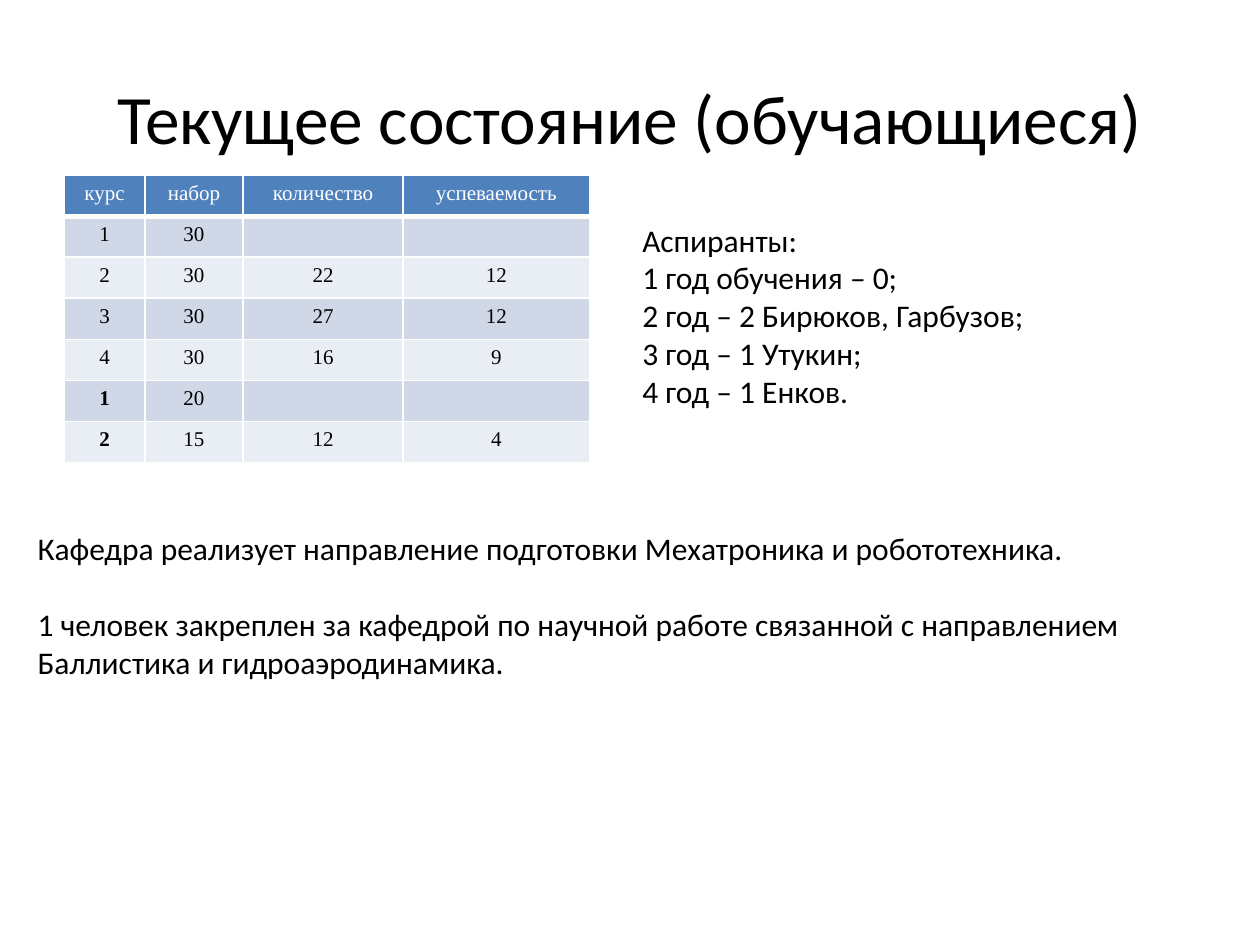
from dataclasses import dataclass

from lxml import etree
from pptx import Presentation
from pptx.dml.color import RGBColor
from pptx.enum.text import MSO_ANCHOR, PP_ALIGN
from pptx.oxml.ns import qn
from pptx.util import Emu, Inches, Pt

LEFT, MID = PP_ALIGN.LEFT, PP_ALIGN.CENTER
TOP, CORE = MSO_ANCHOR.TOP, MSO_ANCHOR.MIDDLE
SANS, SERIF = "Calibri", "Times New Roman"
BLACK, WHITE = "000000", "FFFFFF"
HEAD, BANDS = "4F81BD", ("D0D8E8", "E9EDF4")
WIDE, HIGH = Inches(10), Inches(7.5)
COLS, ROW = (0.64, 0.78, 1.27, 1.48), 2.28 / 7
SIDES = ("a:lnL", "a:lnR", "a:lnT", "a:lnB")
CELL_SIZE = 12

GRID = (
    ("курс", "набор", "количество", "успеваемость"),
    ("1", "30", "", ""),
    ("2", "30", "22", "12"),
    ("3", "30", "27", "12"),
    ("4", "30", "16", "9"),
    ("1", "20", "", ""),
    ("2", "15", "12", "4"),
)
BOLD_FROM = 5


@dataclass(frozen=True)
class Block:
    x: float
    y: float
    w: float
    h: float
    lines: tuple[str, ...]
    size: float = 18
    align: PP_ALIGN = LEFT
    anchor: MSO_ANCHOR = TOP
    wrap: bool = True
    gap: float = 0


BLOCKS = (
    Block(0.05, 0.04, 0.9, 0.167, ("Текущее состояние (обучающиеся)",),
          39.6, MID, CORE),
    Block(0.5, 0.227, 0.326, 0.216, (
        "Аспиранты:",
        "1 год обучения – 0;",
        "2 год – 2 Бирюков, Гарбузов;",
        "3 год – 1 Утукин;",
        "4 год – 1 Енков.",
    ), wrap=False),
    Block(0.02, 0.553, 0.96, 0.256, (
        "Кафедра реализует направление подготовки Мехатроника и робототехника.",
        "1 человек закреплен за кафедрой по научной работе связанной "
        "с направлением Баллистика и гидроаэродинамика.",
    ), gap=22),
)


def tint(code: str) -> RGBColor:
    return RGBColor.from_string(code)


def write(para, text: str, face: str, size: float, color: str,
          bold: bool = False) -> None:
    run = para.add_run()
    run.text = text
    font = run.font
    font.name, font.size, font.bold = face, Pt(size), bold
    font.color.rgb = tint(color)


def draw_block(slide, block: Block) -> None:
    box = slide.shapes.add_textbox(
        Emu(int(block.x * WIDE)), Emu(int(block.y * HIGH)),
        Emu(int(block.w * WIDE)), Emu(int(block.h * HIGH)))
    frame = box.text_frame
    frame.word_wrap = block.wrap
    frame.vertical_anchor = block.anchor
    for i, line in enumerate(block.lines):
        para = frame.add_paragraph() if i else frame.paragraphs[0]
        para.alignment = block.align
        if i:
            para.space_before = Pt(block.gap)
        write(para, line, SANS, block.size, BLACK)


def edge(cell, side: str, width: float) -> None:
    props = cell._tc.get_or_add_tcPr()
    line = etree.SubElement(props, qn(side), w=str(Pt(width)))
    fill = etree.SubElement(line, qn("a:solidFill"))
    etree.SubElement(fill, qn("a:srgbClr"), val=WHITE)


def draw_cell(cell, text: str, row: int, col: int) -> None:
    for side in SIDES:
        thick = (row, side) in ((0, "a:lnB"), (1, "a:lnT"))
        edge(cell, side, 3 if thick else 1)
    cell.fill.solid()
    cell.fill.fore_color.rgb = tint(BANDS[(row - 1) % 2] if row else HEAD)
    para = cell.text_frame.paragraphs[0]
    para.alignment = MID
    if text:
        write(para, text, SERIF, CELL_SIZE, BLACK if row else WHITE,
              row >= BOLD_FROM and col == 0)
    else:
        etree.SubElement(para._p, qn("a:endParaRPr"), sz=str(CELL_SIZE * 100))


def draw_table(slide) -> None:
    table = slide.shapes.add_table(
        len(GRID), len(COLS), Inches(0.51), Inches(1.39),
        Inches(sum(COLS)), Inches(ROW * len(GRID))).table
    for col, width in zip(table.columns, COLS):
        col.width = Inches(width)
    for r, texts in enumerate(GRID):
        table.rows[r].height = Inches(ROW)
        for c, text in enumerate(texts):
            draw_cell(table.cell(r, c), text, r, c)


def main() -> None:
    deck = Presentation()
    deck.slide_width, deck.slide_height = WIDE, HIGH
    slide = deck.slides.add_slide(deck.slide_layouts[6])
    title, *notes = BLOCKS
    draw_block(slide, title)
    draw_table(slide)
    for block in notes:
        draw_block(slide, block)
    deck.save("out.pptx")


if __name__ == "__main__":
    main()
